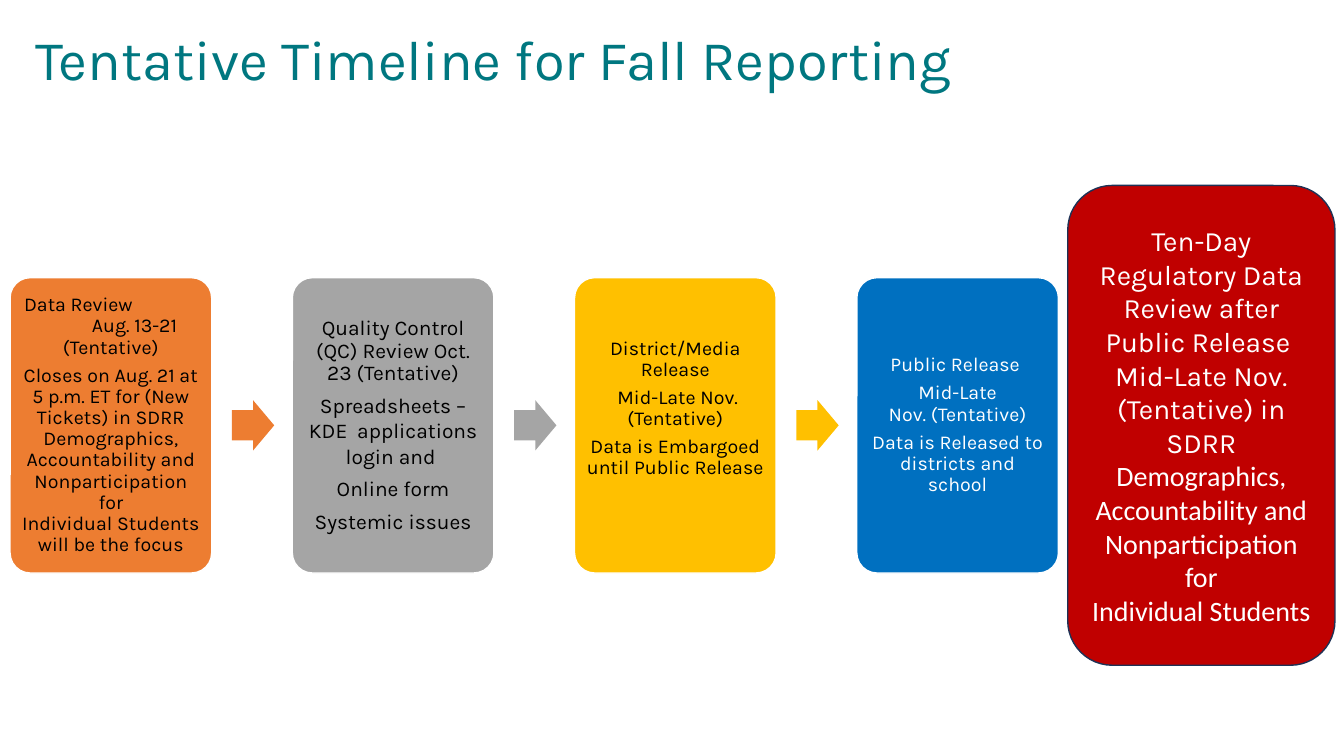
from dataclasses import dataclass
from pptx import Presentation
from pptx import util as u
from pptx.dml.color import RGBColor
from pptx.enum import shapes, text

TEAL = RGBColor(0x00, 0x77, 0x80)
ORANGE = RGBColor(0xED, 0x7D, 0x31)
GRAY = RGBColor(0xA5, 0xA5, 0xA5)
YELLOW = RGBColor(0xFF, 0xC0, 0x00)
BLUE = RGBColor(0x00, 0x70, 0xC0)
RED = RGBColor(0xC0, 0x00, 0x00)
NAVY = RGBColor(0x1E, 0x32, 0x56)
BLACK = RGBColor(0x00, 0x00, 0x00)
WHITE = RGBColor(0xFF, 0xFF, 0xFF)
LEFT, CENTER = text.PP_ALIGN.LEFT, text.PP_ALIGN.CENTER
TIE, HARD_SPACE = "~", chr(160)


@dataclass
class Para:
    words: str
    align: int = CENTER
    leading: float = 0.9
    after: float = 0.35
    margin: float = 0
    font: str = "Karla"


TITLE = Para("Tentative Timeline for Fall Reporting", align=LEFT, after=0, margin=0.25)

STAGES = [
    (ORANGE, BLACK, 14, 0.06, [
        Para("Data Review", align=LEFT, after=0, margin=0.02),
        Para("Aug. 13-21", after=0, margin=0.47),
        Para("(Tentative)"),
        Para("Closes on Aug. 21 at 5 p.m.~ET for~(New Tickets) in SDRR\n"
             "Demographics, Accountability and Nonparticipation for "
             "Individual~Students will be the focus"),
    ]),
    (GRAY, BLACK, 15, 0.06, [
        Para("Quality Control (QC) Review Oct. 23 (Tentative)"),
        Para("Spreadsheets –KDE~ applications login and~", leading=1),
        Para("Online form", leading=1),
        Para("Systemic issues", leading=1),
    ]),
    (YELLOW, BLACK, 14, 0.39, [
        Para("District/Media Release"),
        Para("~Mid-Late Nov. (Tentative)"),
        Para("Data is Embargoed until Public Release"),
    ]),
    (BLUE, WHITE, 14, 0.06, [
        Para("Public Release "),
        Para("Mid-Late Nov.~(Tentative)"),
        Para("Data is Released to districts and school"),
    ]),
]

FINAL_REVIEW = [
    Para("Ten-Day Regulatory Data Review after Public Release ", leading=1, after=0),
    Para("Mid-Late Nov. (Tentative) in SDRR", leading=1, after=0),
    Para("Demographics, Accountability and Nonparticipation for Individual~Students",
         leading=1, after=0, font="Calibri"),
]

SLIDE_W, SLIDE_H = 13.33, 7.5
STAGE_LEFT, STAGE_PITCH = 0.1, 0.21 * SLIDE_W
CARD_W, CARD_H = 0.15 * SLIDE_W, 2.93
ARROW_W, ARROW_H, ARROW_GAP = 0.42, 0.5, 0.2
FINAL_LEFT, FINAL_W, FINAL_H = 10.59, 2.65, 4.76
MIDLINE = 4.22
CARD_INSET = 0.06

deck = Presentation()
deck.slide_width, deck.slide_height = u.Inches(SLIDE_W), u.Inches(SLIDE_H)
slide = deck.slides.add_slide(deck.slide_layouts[6])


def write(frame, paras, size, color):
    frame.word_wrap = True
    frame.vertical_anchor = text.MSO_ANCHOR.MIDDLE
    for number, para in enumerate(paras):
        line = frame.paragraphs[0] if number == 0 else frame.add_paragraph()
        line.alignment = para.align
        line.line_spacing = para.leading
        line.space_after = u.Pt(size * para.after)
        if para.margin:
            line._p.get_or_add_pPr().set("marL", str(u.Inches(para.margin)))
        for part_number, part in enumerate(para.words.split("\n")):
            if part_number:
                line.add_line_break()
            run = line.add_run()
            run.text = part.replace(TIE, HARD_SPACE)
            run.font.name = para.font
            run.font.size = u.Pt(size)
            run.font.color.rgb = color


def block(preset, left, width, height, fill, outline=None):
    shape = slide.shapes.add_shape(
        preset, u.Inches(left), u.Inches(MIDLINE - height / 2), u.Inches(width), u.Inches(height))
    shape.shadow.inherit = False
    shape.fill.solid()
    shape.fill.fore_color.rgb = fill
    if outline is None:
        shape.line.fill.background()
    else:
        shape.line.color.rgb = outline
        shape.line.width = u.Pt(1)
    return shape


heading = slide.shapes.add_textbox(0, 0, u.Inches(11.22), u.Inches(1.24))
write(heading.text_frame, [TITLE], 40, TEAL)

for index, (fill, ink, size, bottom, paras) in enumerate(STAGES):
    left = STAGE_LEFT + index * STAGE_PITCH
    card = block(shapes.MSO_SHAPE.ROUNDED_RECTANGLE, left, CARD_W, CARD_H, fill, WHITE)
    card.adjustments[0] = 0.1
    frame = card.text_frame
    frame.margin_left = frame.margin_right = frame.margin_top = u.Inches(CARD_INSET)
    frame.margin_bottom = u.Inches(bottom)
    write(frame, paras, size, ink)
    if index < len(STAGES) - 1:
        arrow = block(shapes.MSO_SHAPE.RIGHT_ARROW, left + CARD_W + ARROW_GAP,
                      ARROW_W, ARROW_H, fill)
        arrow.adjustments[0] = 0.6

final = block(shapes.MSO_SHAPE.ROUNDED_RECTANGLE, FINAL_LEFT, FINAL_W, FINAL_H, RED, NAVY)
write(final.text_frame, FINAL_REVIEW, 20, WHITE)

deck.save("out.pptx")
